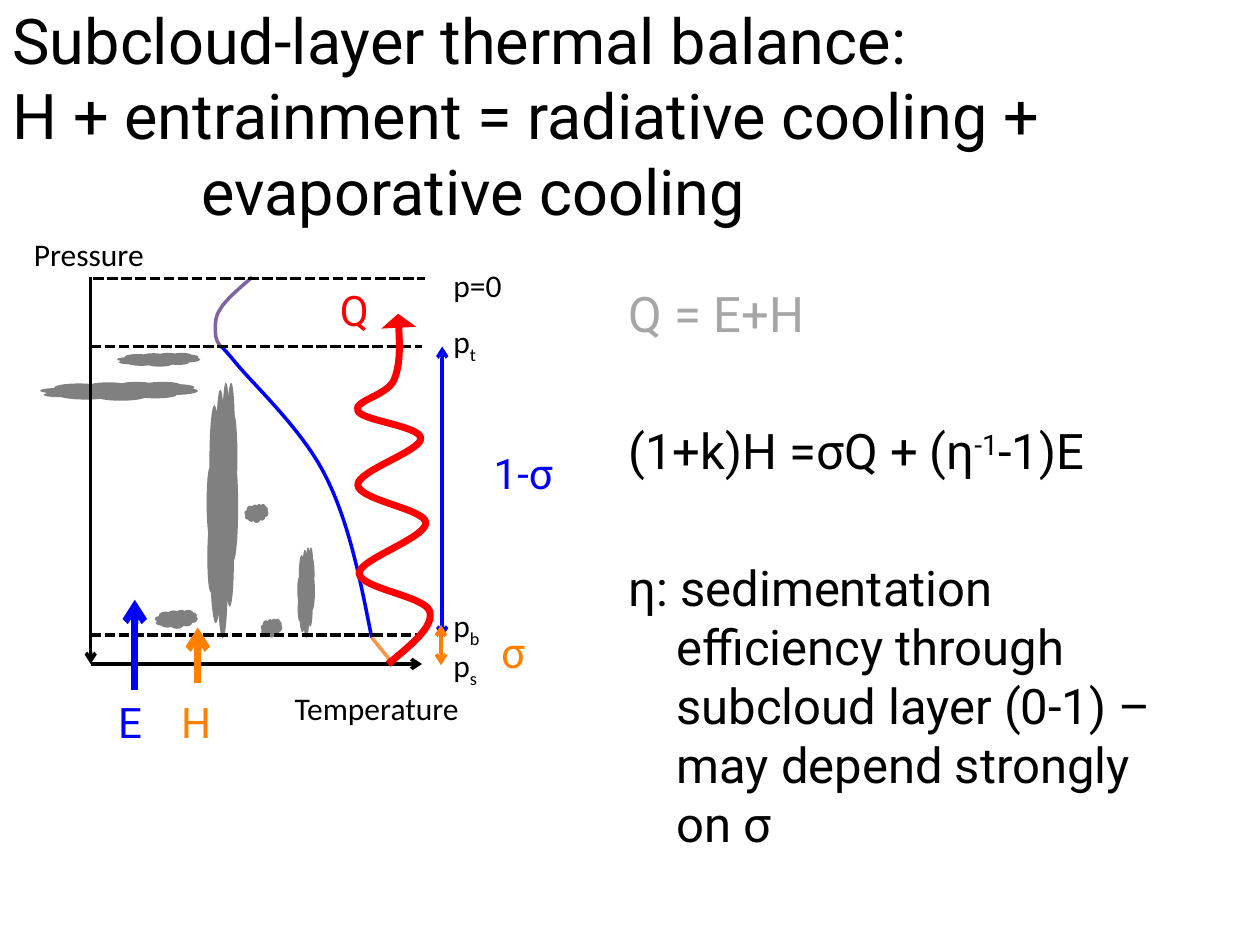
"""Build the subcloud-layer thermal balance slide."""
from dataclasses import dataclass
from typing import Any, NamedTuple

import pptx
import pptx.dml.color
import pptx.enum.dml
import pptx.enum.shapes
import pptx.enum.text
import pptx.oxml.ns
import pptx.util

Inches = pptx.util.Inches
Pt = pptx.util.Pt
Point = tuple[float, float]


@dataclass(frozen=True)
class Theme:
    """Colours, fonts and type sizes."""
    black: str = "000000"
    blue: str = "0000FF"
    orange: str = "FF8000"
    red: str = "FF0000"
    violet: str = "8064A2"
    surface: str = "F79646"
    cloud: str = "808080"
    muted: str = "A6A6A6"
    formula: str = "Roboto"
    axis: str = "Calibri"
    title_size: int = 36
    body_size: int = 28
    symbol_size: int = 24
    axis_size: int = 18


THEME = Theme()
ARROW = {"type": "arrow"}
WIDE_TRIANGLE = {"type": "triangle", "w": "lg", "len": "sm"}


class Box(NamedTuple):
    """Position and size in inches."""
    left: float
    top: float
    width: float
    height: float


class Label(NamedTuple):
    """A short text on the diagram."""
    text: str
    box: Box
    color: str = THEME.black
    subscript: str = ""
    font: str = THEME.axis
    size: int = THEME.axis_size
    wrap: bool = True


class Line(NamedTuple):
    """A straight line with optional arrowheads."""
    start: Point
    end: Point
    color: str = THEME.black
    width: float = 2
    dashed: bool = False
    head: dict[str, str] | None = None
    tail: dict[str, str] | None = None


class Curve(NamedTuple):
    """A chain of cubic curves: a start, then three points for each part."""
    points: list[Point]
    color: str
    width: float = 2
    tail: dict[str, str] | None = None


def symbol(text: str, left: float, top: float, color: str, width: float = 0.47) -> Label:
    """Describe a large coloured symbol."""
    return Label(text, Box(left, top, width, 0.5), color, "", THEME.formula, THEME.symbol_size)


CLOUDS = [
    Box(1.23, 4.84, 0.34, 0.15), Box(1.64, 3.03, 0.25, 2.03), Box(2.36, 4.34, 0.14, 0.72),
    Box(0.93, 2.8, 0.66, 0.11), Box(2.07, 4.91, 0.17, 0.15), Box(1.94, 4, 0.19, 0.15),
    Box(0.32, 3.03, 1.25, 0.15),
]
CURVES = [
    Curve([(2.95, 5.06), (2.86, 4.6), (2.77, 4.15), (2.59, 3.79), (2.41, 3.42), (2.02, 3.06),
           (1.88, 2.89), (1.74, 2.72), (1.75, 2.75), (1.75, 2.75)], THEME.blue),
    Curve([(1.75, 2.75), (1.73, 2.72), (1.71, 2.69), (1.71, 2.64), (1.71, 2.59), (1.7, 2.52),
           (1.75, 2.45), (1.8, 2.37), (1.9, 2.29), (2, 2.2)], THEME.violet),
]
RADIATION = Curve(
    [(3.08, 5.27), (3.26, 5.12), (3.45, 4.97), (3.41, 4.85), (3.37, 4.73), (2.86, 4.67),
     (2.85, 4.55), (2.85, 4.44), (3.38, 4.27), (3.38, 4.15), (3.38, 4.04), (2.85, 3.97),
     (2.84, 3.85), (2.83, 3.74), (3.34, 3.58), (3.34, 3.48), (3.34, 3.38), (2.87, 3.34),
     (2.84, 3.26), (2.8, 3.18), (3.08, 3.14), (3.13, 3.01), (3.18, 2.88), (3.17, 2.68),
     (3.16, 2.49)], THEME.red, 4, WIDE_TRIANGLE)
LINES = [
    Line((0.72, 5.27), (3.35, 5.27), tail=ARROW),
    Line((0.72, 2.2), (0.72, 5.27), tail=ARROW),
    Line((2.95, 5.06), (3.12, 5.27), THEME.surface),
    *(Line((left, level), (left + 2.63, level), dashed=True)
      for left, level in [(0.72, 5.04), (0.72, 2.75), (0.74, 2.21)]),
    Line((1.07, 5.48), (1.07, 4.76), THEME.blue, 4, tail=ARROW),
    Line((1.57, 5.42), (1.57, 4.98), THEME.orange, 4, tail=ARROW),
    Line((3.51, 2.75), (3.51, 5.06), THEME.blue, head=ARROW, tail=ARROW),
    Line((3.5, 4.96), (3.5, 5.28), THEME.orange, head=ARROW, tail=ARROW),
]
LABELS = [
    Label("Pressure", Box(0.17, 1.82, 1.09, 0.4), wrap=False),
    Label("Temperature", Box(2.24, 5.42, 1.55, 0.4), wrap=False),
    *(Label(text, Box(3.5, top, 0.61, 0.4), subscript=subscript)
      for text, subscript, top in [("p=0", "", 2.06), ("p", "t", 2.51),
                                   ("p", "b", 4.76), ("p", "s", 5.08)]),
    symbol("Q", 2.6, 2.21, THEME.red),
    symbol("E", 0.84, 5.48, THEME.blue),
    symbol("H", 1.34, 5.48, THEME.orange),
    symbol("σ", 3.88, 4.92, THEME.orange),
    symbol("1-σ", 3.82, 3.5, THEME.blue, 0.92),
]
TITLE = ["Subcloud-layer thermal balance:", "H + entrainment = radiative cooling +",
         "\tevaporative cooling"]
BODY = [
    ([("Q = E+H", 0)], THEME.muted, 5.6),
    ([("(1+k)H =σQ + (η", 0), ("-1", 30), ("-1)E", 0)], THEME.black, 44.8),
    ([("η: sedimentation efficiency through subcloud layer (0-1) – may depend strongly on σ", 0)],
     THEME.black, 44.8),
]


def apply(target: Any, values: dict[str, Any]) -> None:
    """Set each named attribute on the target."""
    for name, value in values.items():
        setattr(target, name, value)


def rgb(color: str) -> pptx.dml.color.RGBColor:
    """Turn a hex string into a colour."""
    return pptx.dml.color.RGBColor.from_string(color)


def add_element(parent: Any, tag: str, **values: Any) -> Any:
    """Append a drawing element with the given attributes."""
    child = parent.makeelement(pptx.oxml.ns.qn(tag), {k: str(v) for k, v in values.items()})
    parent.append(child)
    return child


def add_span(para: Any, text: str, font: str, size: int, color: str, baseline: int = 0) -> None:
    """Add a formatted run, raised or lowered by a percentage."""
    span = para.add_run()
    span.text = text
    apply(span.font, {"name": font, "size": Pt(size)})
    span.font.color.rgb = rgb(color)
    if baseline:
        span.font._element.set("baseline", str(baseline * 1000))


def style_line(shape: Any, stroke: Line | Curve, head: dict[str, str] | None = None) -> None:
    """Set stroke colour, width and arrowheads."""
    shape.line.color.rgb = rgb(stroke.color)
    shape.line.width = Pt(stroke.width)
    for tag, values in (("a:headEnd", head), ("a:tailEnd", stroke.tail)):
        if values:
            add_element(shape.line._get_or_add_ln(), tag, **values)


def add_cloud(page: Any, box: Box) -> None:
    """Draw a plain cloud."""
    shape = page.shapes.add_shape(pptx.enum.shapes.MSO_SHAPE.CLOUD, *map(Inches, box))
    shape.shadow.inherit = False
    shape.fill.solid()
    shape.fill.fore_color.rgb = rgb(THEME.cloud)
    shape.line.fill.background()


def add_line(page: Any, line: Line) -> None:
    """Draw a straight connector."""
    shape = page.shapes.add_connector(pptx.enum.shapes.MSO_CONNECTOR.STRAIGHT,
                                      *map(Inches, line.start + line.end))
    if line.dashed:
        shape.line.dash_style = pptx.enum.dml.MSO_LINE.SQUARE_DOT
    style_line(shape, line, line.head)
    add_element(shape._element.spPr, "a:effectLst")


def add_curve(page: Any, curve: Curve) -> None:
    """Draw an open outline and bend each of its segments into a cubic curve."""
    points = [(Inches(x), Inches(y)) for x, y in curve.points]
    builder = page.shapes.build_freeform(*points[0], scale=1.0)
    builder.add_line_segments(points[3::3], close=False)
    shape = builder.convert_to_shape()
    segments = list(shape._element.iter(pptx.oxml.ns.qn("a:lnTo")))
    outline = segments[0].getparent()
    for index, segment in enumerate(segments):
        outline.remove(segment)
        bend = add_element(outline, "a:cubicBezTo")
        for x, y in points[3 * index + 1:3 * index + 4]:
            add_element(bend, "a:pt", x=x - shape.left, y=y - shape.top)
    shape.shadow.inherit = False
    shape.fill.background()
    style_line(shape, curve)


def add_label(page: Any, label: Label) -> None:
    """Write a short text with an optional subscript."""
    frame = page.shapes.add_textbox(*map(Inches, label.box)).text_frame
    frame.word_wrap = label.wrap
    for text, baseline in ((label.text, 0), (label.subscript, -25)):
        if text:
            add_span(frame.paragraphs[0], text, label.font, label.size, label.color, baseline)


def prepare(shape: Any, box: Box, anchor: Any) -> Any:
    """Place a placeholder and return its text frame."""
    apply(shape, {name: Inches(value) for name, value in box._asdict().items()})
    apply(shape.text_frame, {"word_wrap": True, "vertical_anchor": anchor,
                             "auto_size": pptx.enum.text.MSO_AUTO_SIZE.NONE})
    return shape.text_frame


def fill_title(shape: Any) -> None:
    """Write the title as one paragraph with a tab stop for its last line."""
    frame = prepare(shape, Box(0, 0, 10, 1.82), pptx.enum.text.MSO_ANCHOR.MIDDLE)
    para = frame.paragraphs[0]
    para.alignment = pptx.enum.text.PP_ALIGN.LEFT
    stops = add_element(para._p.get_or_add_pPr(), "a:tabLst")
    add_element(stops, "a:tab", pos=Inches(1.5), algn="l")
    for index, text in enumerate(TITLE):
        if index:
            para.add_line_break()
        add_span(para, text, THEME.formula, THEME.title_size, THEME.black)


def fill_body(shape: Any) -> None:
    """Write the equations with a hanging indent and no bullets."""
    frame = prepare(shape, Box(4.89, 2.2, 4.61, 4.84), pptx.enum.text.MSO_ANCHOR.TOP)
    for index, (spans, color, before) in enumerate(BODY):
        para = frame.add_paragraph() if index else frame.paragraphs[0]
        para.space_before = Pt(before)
        props = para._p.get_or_add_pPr()
        for name, value in {"marL": 0.38, "indent": -0.38}.items():
            props.set(name, str(Inches(value)))
        add_element(props, "a:buNone")
        for text, baseline in spans:
            add_span(para, text, THEME.formula, THEME.body_size, color, baseline)


def main() -> None:
    """Build and save the deck."""
    deck = pptx.Presentation()
    apply(deck, {"slide_width": Inches(10), "slide_height": Inches(7.5)})
    page = deck.slides.add_slide(deck.slide_layouts[1])
    fill_title(page.shapes.title)
    fill_body(page.placeholders[1])
    for draw, items in ((add_cloud, CLOUDS), (add_curve, CURVES), (add_line, LINES),
                        (add_curve, [RADIATION]), (add_label, LABELS)):
        for item in items:
            draw(page, item)
    deck.save("out.pptx")


if __name__ == "__main__":
    main()
